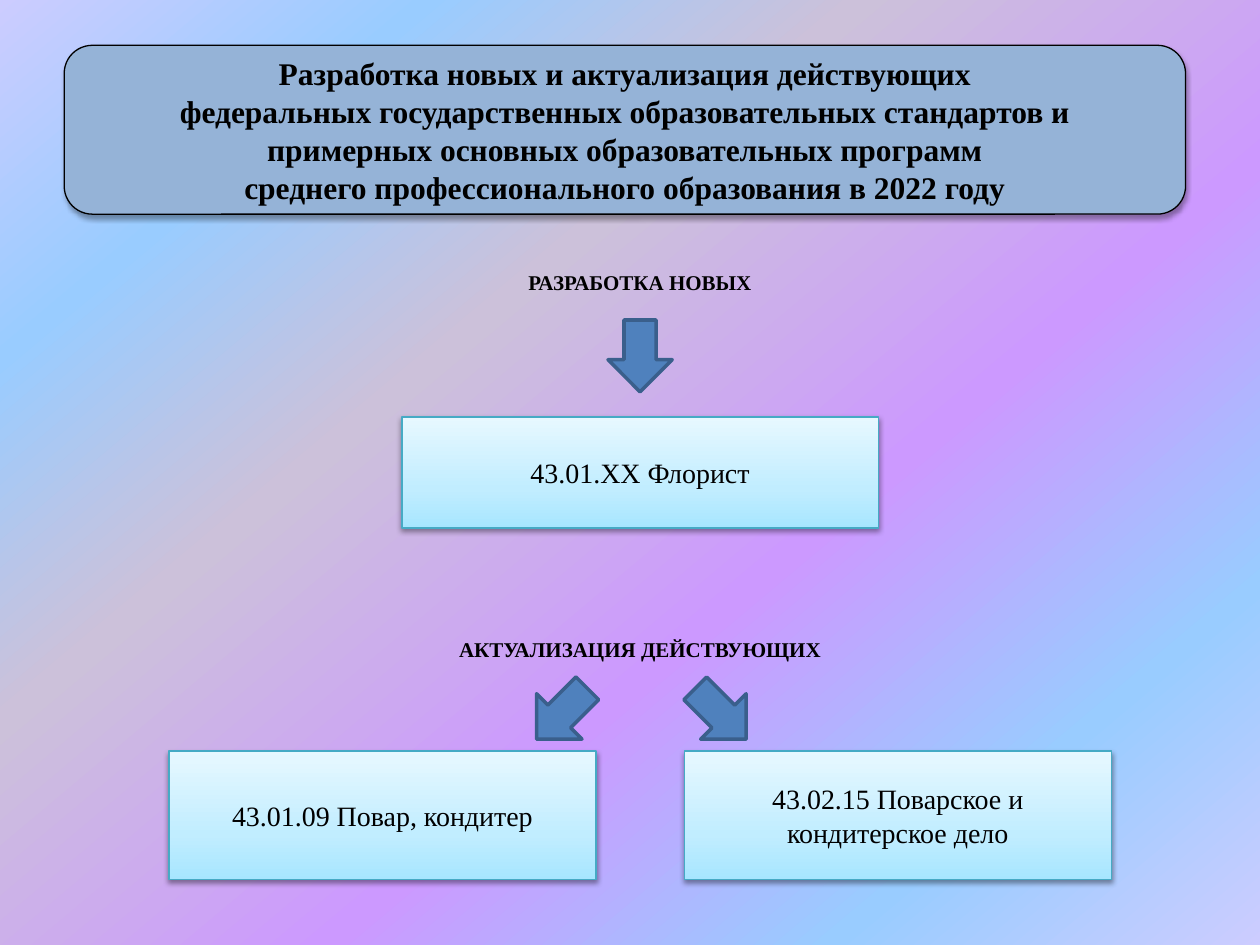
from lxml import etree
from pptx import Presentation
from pptx.dml.color import RGBColor
from pptx.enum.shapes import MSO_SHAPE as SHAPE
from pptx.enum.text import MSO_ANCHOR as ANCHOR, MSO_AUTO_SIZE as AUTO, PP_ALIGN as ALIGN
from pptx.oxml.ns import qn
from pptx.util import Inches, Pt

FONT = "Times New Roman"
WIDTH, HEIGHT = 10, 7.5
BACKDROP = [(0, "CCCCFF"), (18, "99CCFF"), (36, "CCC1DA"),
            (61, "CC99FF"), (82, "99CCFF"), (100, "CCCCFF")]
ICE = [(0, "A7E6FF"), (35, "C1EDFF"), (100, "E7F8FF")]

# Grid: the chart's axis, and the row of two cards beneath it
AXIS = 5.08
CARD_W, CARD_H, CARD_TOP, CARD_GAP = 3.39, 1.02, 5.96, 0.7
ARROW_W, ARROW_H = 0.51, 0.57


def color(hex_code):
    return RGBColor.from_string(hex_code)


def set_gradient(fill, element, stops, angle):
    """Clockwise angle in degrees; stops are (percent, colour)."""
    fill.gradient()
    fill.gradient_angle = 360 - angle
    gs_list = next(element.iter(qn("a:gsLst")))
    for gs in list(gs_list):
        gs_list.remove(gs)
    for percent, hex_code in stops:
        gs = etree.SubElement(gs_list, qn("a:gs"), pos=str(percent * 1000))
        etree.SubElement(gs, qn("a:srgbClr"), val=hex_code)


def add_shadow(sp, opacity, distance):
    effects = sp.element.spPr.find(qn("a:effectLst"))
    shadow = etree.SubElement(effects, qn("a:outerShdw"), blurRad=str(Pt(3.1)),
                              dist=str(Pt(distance)), dir="5400000", rotWithShape="0")
    clr = etree.SubElement(shadow, qn("a:srgbClr"), val="000000")
    etree.SubElement(clr, qn("a:alpha"), val=str(opacity * 1000))


def write(sp, lines, size, bold=False, spacing=None):
    tf = sp.text_frame
    tf.word_wrap = True
    for i, line in enumerate(lines):
        p = tf.paragraphs[0] if i == 0 else tf.add_paragraph()
        p.alignment = ALIGN.CENTER
        if spacing:
            p.line_spacing = spacing
        r = p.add_run()
        r.text = line
        r.font.name, r.font.size, r.font.bold = FONT, Pt(size), bold
        r.font.color.rgb = color("000000")


def add_box(s, kind, left, top, width, height, line, weight, fill=None):
    sp = s.shapes.add_shape(kind, Inches(left), Inches(top), Inches(width), Inches(height))
    sp.shadow.inherit = False
    sp.line.color.rgb = color(line)
    sp.line.width = Pt(weight)
    if fill:
        sp.fill.solid()
        sp.fill.fore_color.rgb = color(fill)
    else:
        set_gradient(sp.fill, sp.element.spPr, ICE, 270)
    sp.text_frame.vertical_anchor = ANCHOR.MIDDLE
    return sp


def add_title(s, lines):
    sp = add_box(s, SHAPE.ROUNDED_RECTANGLE, 0.51, 0.36, 0.89 * WIDTH, 1.34,
                 "000000", 0.75, "95B3D7")
    add_shadow(sp, 35, 1.8)
    write(sp, lines, 18, bold=True)


def add_heading(s, text, top, width, height):
    sp = s.shapes.add_textbox(Inches(AXIS - width / 2), Inches(top),
                              Inches(width), Inches(height))
    write(sp, [text], 12, bold=True, spacing=1.2)
    sp.text_frame.auto_size = AUTO.NONE


def add_card(s, text, center, top, width, height):
    sp = add_box(s, SHAPE.RECTANGLE, center - width / 2, top, width, height, "46AAC5", 0.75)
    add_shadow(sp, 38, 1.6)
    write(sp, [text], 16)


def add_arrow(s, center, top, rotation=0):
    sp = add_box(s, SHAPE.DOWN_ARROW, center - ARROW_W / 2, top, ARROW_W, ARROW_H,
                 "3A5F8C", 2, "4F81BD")
    sp.rotation = rotation


def main():
    prs = Presentation()
    prs.slide_width, prs.slide_height = Inches(WIDTH), Inches(HEIGHT)
    s = prs.slides.add_slide(prs.slide_layouts[6])
    set_gradient(s.background.fill, s.element, BACKDROP, 50)

    # Title
    add_title(s, ["Разработка новых и актуализация действующих",
                  "федеральных государственных образовательных стандартов и",
                  "примерных основных образовательных программ",
                  "среднего профессионального образования в 2022 году"])

    # New standards
    add_heading(s, "РАЗРАБОТКА НОВЫХ", 2.05, 4.57, 0.46)
    add_arrow(s, AXIS, 2.54)
    add_card(s, "43.01.ХХ Флорист", AXIS, 3.31, 3.78, 0.88)

    # Updated standards: two cards mirrored about the axis
    add_heading(s, "АКТУАЛИЗАЦИЯ ДЕЙСТВУЮЩИХ", 4.96, 4.09, 0.32)
    offset = (CARD_W + CARD_GAP) / 2
    for side, text in ((-1, "43.01.09 Повар, кондитер"),
                       (1, "43.02.15 Поварское и кондитерское дело")):
        add_card(s, text, AXIS + side * offset, CARD_TOP, CARD_W, CARD_H)
        add_arrow(s, AXIS + 0.01 + side * 0.63, 5.38, -45 * side % 360)

    prs.save("out.pptx")


if __name__ == "__main__":
    main()
